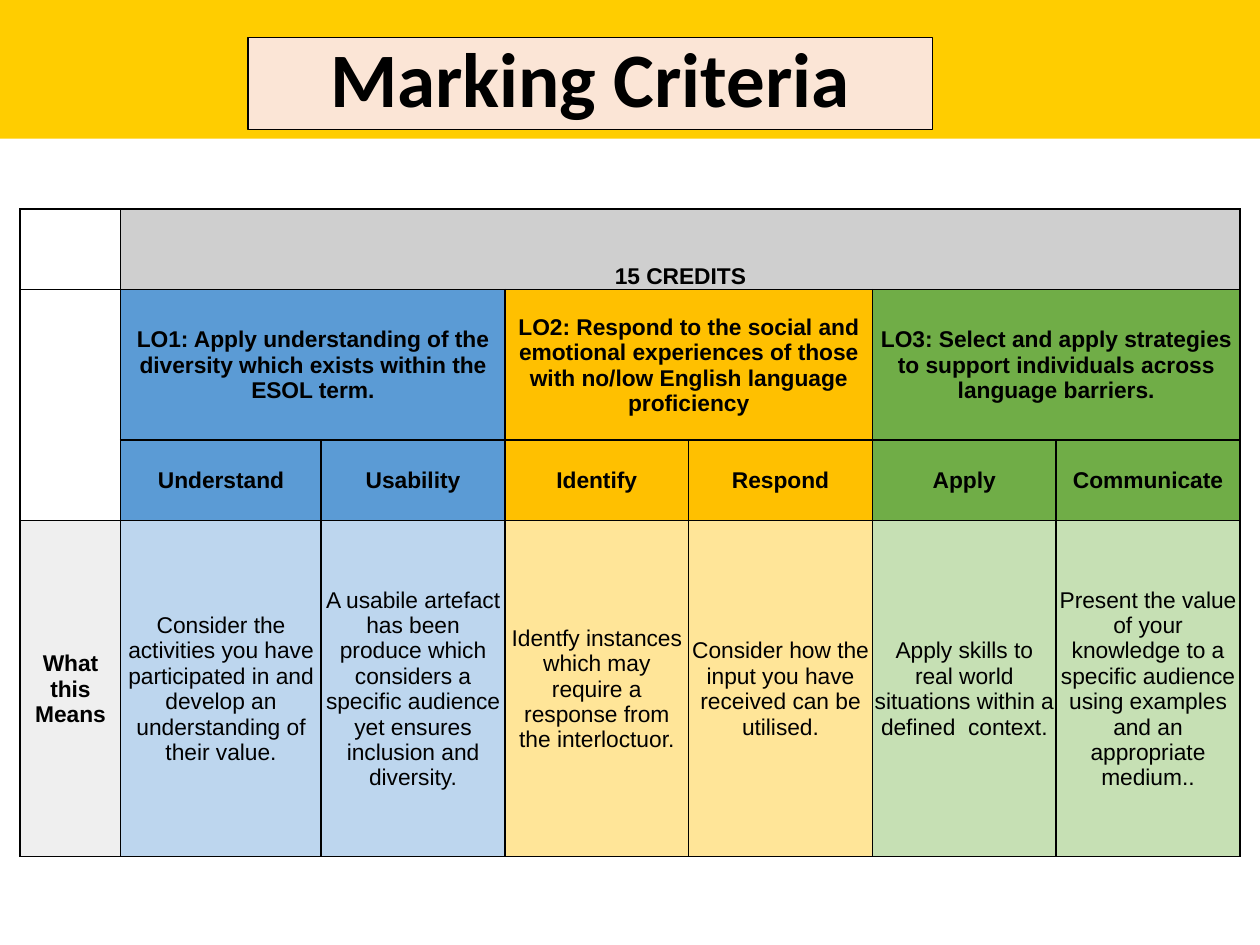
from dataclasses import dataclass

from lxml.etree import SubElement
from pptx import Presentation
from pptx.dml.color import RGBColor as Color
from pptx.enum.shapes import MSO_SHAPE as Shape
from pptx.enum.text import MSO_ANCHOR as Anchor, PP_ALIGN as Align
from pptx.oxml import parse_xml
from pptx.oxml.ns import nsdecls, qn
from pptx.util import Pt

TITLE = "Marking Criteria"
CREDITS = "15 CREDITS"
ROW_LABEL = "What this Means"
OUTCOMES = [
    ("LO1: Apply understanding of the diversity which exists within the ESOL term.", "blue", [
        ("Understand", "Consider the activities you have participated in and develop an "
                       "understanding of their value."),
        ("Usability", "A usabile artefact has been produce which considers a specific audience "
                      "yet ensures inclusion and diversity."),
    ]),
    ("LO2: Respond to the social and emotional experiences of those with no/low English "
     "language proficiency", "gold", [
        ("Identify", "Identfy instances which may require a response from the interloctuor."),
        ("Respond", "Consider how the input you have received can be utilised."),
    ]),
    ("LO3: Select and apply strategies to support individuals across language barriers.", "green", [
        ("Apply", "Apply skills to real world situations within a defined  context."),
        ("Communicate", "Present the value of your knowledge to a specific audience using "
                        "examples and an appropriate medium.."),
    ]),
]


@dataclass(frozen=True)
class Theme:
    banner: str = "FFCD00"
    title_fill: str = "FBE5D6"
    ink: str = "000000"
    white: str = "FFFFFF"
    credits: str = "CFCFCF"
    label: str = "EFEFEF"
    blue: tuple = ("5B9BD5", "BDD6EE")
    gold: tuple = ("FFC000", "FFE598")
    green: tuple = ("70AD47", "C6E0B4")
    title_font: str = "Calibri"
    body_font: str = "Arial"
    title_size: float = 44
    body_size: float = 13


THEME = Theme()
SLIDE_WIDTH, SLIDE_HEIGHT = 720, 540
BANNER_BOX = (0, 0, SLIDE_WIDTH, 79.2)
TITLE_BOX = (141.8, 21.6, 391, 52.6)
TABLE_LEFT, TABLE_TOP = 11.5, 119.5
COLUMN_WIDTHS = [57.5, 114.5] + [105] * 5
ROW_HEIGHTS = [46, 86, 46, 192]


def apply_format(target, values):
    for name, value in values.items():
        setattr(target, name, value)


def write_text(text_frame, text, font_name, size, bold):
    paragraph = text_frame.paragraphs[0]
    paragraph.alignment = Align.CENTER
    run = paragraph.add_run()
    run.text = text
    apply_format(run.font, {"name": font_name, "size": Pt(size), "bold": bold})
    run.font.color.rgb = Color.from_string(THEME.ink)
    return paragraph


def paint(item, color):
    item.fill.solid()
    item.fill.fore_color.rgb = Color.from_string(color)


def add_rectangle(slide, box, color, outlined=False):
    shape = slide.shapes.add_shape(Shape.RECTANGLE, *map(Pt, box))
    shape.shadow.inherit = False
    paint(shape, color)
    if outlined:
        shape.line.color.rgb = Color.from_string(THEME.ink)
        shape.line.width = Pt(0.75)
    else:
        shape.line.fill.background()
    return shape


def add_borders(cell):
    properties = cell._tc.get_or_add_tcPr()
    for index, side in enumerate("LRTB"):
        border = parse_xml(f'<a:ln{side} {nsdecls("a")} w="{Pt(1)}"/>')
        fill = SubElement(border, qn("a:solidFill"))
        SubElement(fill, qn("a:srgbClr"), val=THEME.ink)
        properties.insert(index, border)


def fill_cell(cell, text, color, bold=True, anchor=Anchor.MIDDLE):
    paint(cell, color)
    apply_format(cell, {
        "vertical_anchor": anchor, "margin_left": Pt(0.7), "margin_right": Pt(0.7),
        "margin_top": Pt(0.7), "margin_bottom": Pt(0),
    })
    if text:
        write_text(cell.text_frame, text, THEME.body_font, THEME.body_size, bold)


def add_title(slide):
    shape = add_rectangle(slide, TITLE_BOX, THEME.title_fill, outlined=True)
    apply_format(shape.text_frame, {"word_wrap": True, "vertical_anchor": Anchor.BOTTOM})
    paragraph = write_text(shape.text_frame, TITLE, THEME.title_font, THEME.title_size, True)
    paragraph.line_spacing = 0.9


def add_criteria_table(slide):
    table = slide.shapes.add_table(
        len(ROW_HEIGHTS), len(COLUMN_WIDTHS), Pt(TABLE_LEFT), Pt(TABLE_TOP),
        Pt(sum(COLUMN_WIDTHS)), Pt(sum(ROW_HEIGHTS))).table
    apply_format(table, {"first_row": False, "horz_banding": False})
    for column, width in zip(table.columns, COLUMN_WIDTHS):
        column.width = Pt(width)
    for row, height in zip(table.rows, ROW_HEIGHTS):
        row.height = Pt(height)
    for cell in table.iter_cells():
        paint(cell, THEME.white)
        add_borders(cell)

    table.cell(0, 1).merge(table.cell(0, len(COLUMN_WIDTHS) - 1))
    table.cell(1, 0).merge(table.cell(2, 0))
    fill_cell(table.cell(0, 1), CREDITS, THEME.credits, anchor=Anchor.BOTTOM)
    fill_cell(table.cell(3, 0), ROW_LABEL, THEME.label)

    column = 1
    for outcome, color_name, criteria in OUTCOMES:
        dark, light = getattr(THEME, color_name)
        table.cell(1, column).merge(table.cell(1, column + len(criteria) - 1))
        fill_cell(table.cell(1, column), outcome, dark)
        for criterion, meaning in criteria:
            fill_cell(table.cell(2, column), criterion, dark)
            fill_cell(table.cell(3, column), meaning, light, bold=False)
            column += 1


def main():
    presentation = Presentation()
    apply_format(presentation, {"slide_width": Pt(SLIDE_WIDTH), "slide_height": Pt(SLIDE_HEIGHT)})
    slide = presentation.slides.add_slide(presentation.slide_layouts[6])
    add_rectangle(slide, BANNER_BOX, THEME.banner)
    add_title(slide)
    add_criteria_table(slide)
    presentation.save("out.pptx")


if __name__ == "__main__":
    main()
